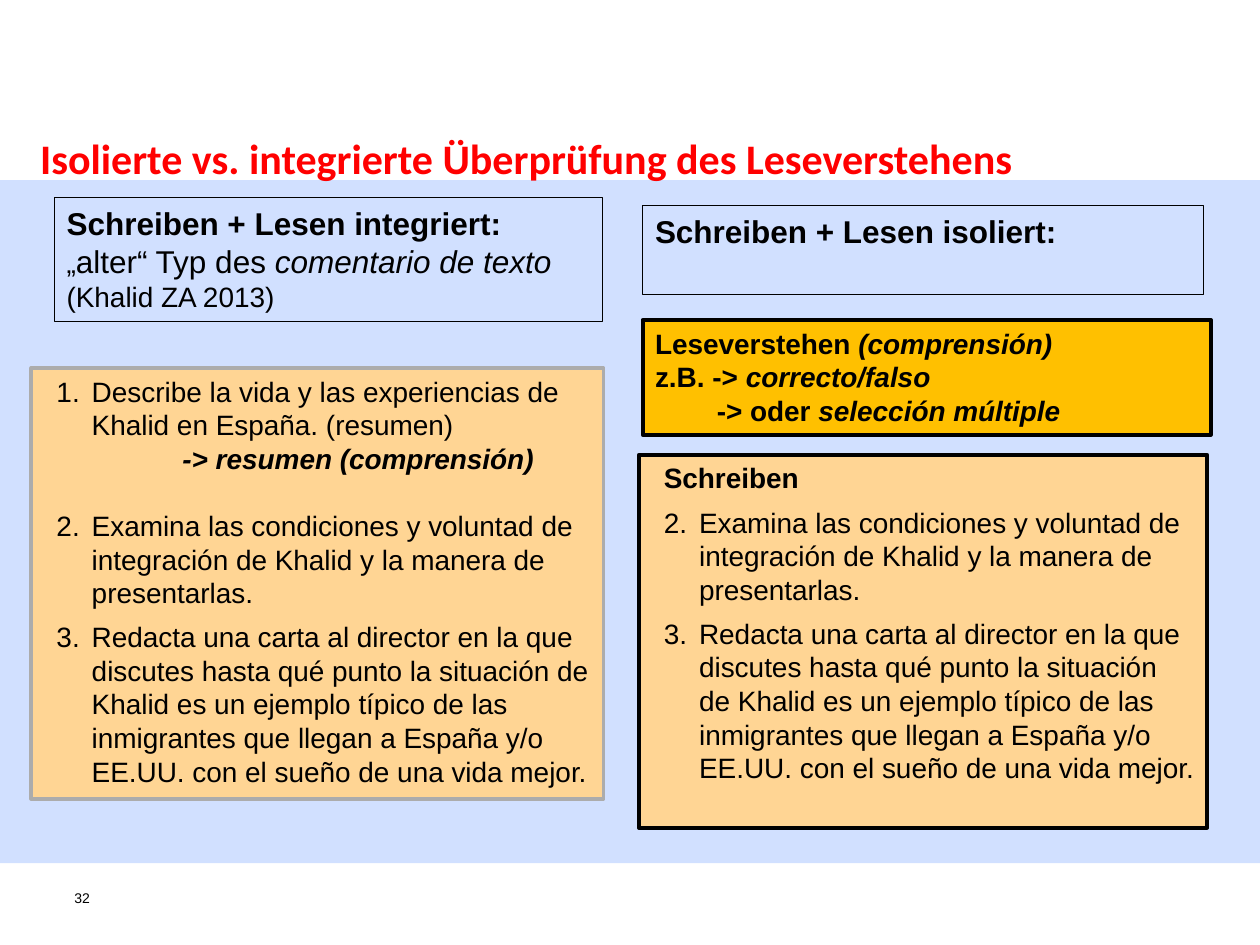
from dataclasses import dataclass

from lxml.etree import SubElement
from pptx import Presentation
from pptx.dml.color import RGBColor as RGB
from pptx.enum.shapes import MSO_SHAPE as Kind
from pptx.enum.text import MSO_ANCHOR as Anchor, PP_ALIGN as Align
from pptx.oxml.ns import qn
from pptx.util import Inches, Pt


@dataclass(frozen=True)
class Theme:
    """Colours, fonts and type sizes of the slide."""
    panel: str = "D1E0FF"
    sand: str = "FFD594"
    gold: str = "FFC000"
    grey: str = "ACACAC"
    ink: str = "000000"
    red: str = "FF0000"
    sans: str = "Arial"
    head: str = "Calibri"
    title: int = 24
    lead: int = 18
    body: int = 16
    tiny: int = 8
    thin: float = 0.75
    thick: float = 2.25


T = Theme()
BOLD = {"bold": True}
ITAL = {"italic": True}
BOTH = BOLD | ITAL
TASKS = (
    "Examina las condiciones y voluntad de integración de Khalid y la manera de "
    "presentarlas.",
    "Redacta una carta al director en la que discutes hasta qué punto la situación "
    "de Khalid es un ejemplo típico de las inmigrantes que llegan a España y/o "
    "EE.UU. con el sueño de una vida mejor.",
)


def add_run(para, text, size=T.body, color=T.ink, face=T.sans, bold=False, italic=False):
    """Add one formatted run to a paragraph."""
    run = para.add_run()
    run.text = text
    font = run.font
    font.name, font.size = face, Pt(size)
    font.bold, font.italic = bold, italic
    font.color.rgb = RGB.from_string(color)


def add_text(frame, *runs, left=0, hang=0, after=0, start=None):
    """Add a paragraph of (text, format) runs, numbered when start is given."""
    first = frame.paragraphs[0]
    para = frame.add_paragraph() if first.runs else first
    para.alignment = Align.LEFT
    para.space_after = Pt(after)
    props = para._p.get_or_add_pPr()
    props.set("marL", str(Inches(left)))
    props.set("indent", str(Inches(-hang)))
    if start:
        SubElement(props, qn("a:buFont"), typeface="+mj-lt")
        SubElement(props, qn("a:buAutoNum"), type="arabicPeriod", startAt=str(start))
    for text, style in runs:
        add_run(para, text, **style)


def add_task(frame, text, start, after=0):
    """Add one numbered exercise with a hanging indent."""
    add_text(frame, (text, {}), left=0.38, hang=0.28, after=after, start=start)


def add_tasks(frame):
    """Add the two writing exercises that both columns share."""
    for text, after in zip(TASKS, (6, 0)):
        add_task(frame, text, 2, after)


def add_box(slide, box, fill=None, line=None, width=T.thin):
    """Draw a rectangle and return its text frame."""
    shape = slide.shapes.add_shape(Kind.RECTANGLE, *map(Inches, box))
    shape.shadow.inherit = False
    if fill:
        shape.fill.solid()
        shape.fill.fore_color.rgb = RGB.from_string(fill)
    else:
        shape.fill.background()
    if line:
        shape.line.color.rgb = RGB.from_string(line)
        shape.line.width = Pt(width)
    else:
        shape.line.fill.background()
    frame = shape.text_frame
    frame.word_wrap, frame.vertical_anchor = True, Anchor.TOP
    return frame


def add_label(slide, box, text, inset=(0, 0), **style):
    """Place a plain text box with the given side and top insets."""
    frame = slide.shapes.add_textbox(*map(Inches, box)).text_frame
    frame.word_wrap = True
    side, top = map(Inches, inset)
    frame.margin_left = frame.margin_right = side
    frame.margin_top, frame.margin_bottom = top, 0
    add_text(frame, (text, style))


def add_joint(slide, x, y):
    """Build the column on integrated reading and writing."""
    lead = {"size": T.lead}
    head = add_box(slide, (x + 0.18, y, 4.35, 0.98), line=T.ink)
    add_text(head, ("Schreiben + Lesen integriert:", lead | BOLD))
    add_text(head, ("„", {}), ("alter“ Typ des ", lead), ("comentario de texto", lead | ITAL))
    add_text(head, ("(Khalid ZA 2013)", {}))

    work = add_box(slide, (x, y + 1.35, 4.54, 3.42), T.sand, T.grey, T.thick)
    add_task(work, "Describe la vida y las experiencias de Khalid en España. (resumen)", 1)
    add_text(work, ("-> resumen (comprensión)", BOTH), left=1.1, after=19.2)
    add_tasks(work)


def add_split(slide, x, y):
    """Build the column on isolated reading and writing."""
    head = add_box(slide, (x + 0.03, y, 4.45, 0.71), line=T.ink)
    add_text(head, ("Schreiben + Lesen isoliert:", {"size": T.lead} | BOLD))

    read = add_box(slide, (x + 0.03, y + 0.91, 4.51, 0.91), T.gold, T.ink, T.thick)
    add_text(read, ("Leseverstehen ", BOLD), ("(comprensión)", BOTH))
    add_text(read, ("z.B. -> ", BOLD), ("correcto/falso", BOTH))
    add_text(read, ("-> oder ", BOLD), ("selección múltiple", BOTH), left=0.49)

    work = add_box(slide, (x, y + 1.98, 4.51, 2.96), T.sand, T.ink, T.thick)
    add_text(work, ("Schreiben", BOLD), left=0.1, after=6)
    add_tasks(work)


def main():
    """Build and save the slide."""
    deck = Presentation()
    deck.slide_width, deck.slide_height = Inches(10), Inches(7.5)
    slide = deck.slides.add_slide(deck.slide_layouts[6])
    add_box(slide, (0, 1.43, 10, 5.42), T.panel)
    add_label(slide, (0.59, 7.06, 0.32, 0.37), "32", size=T.tiny)
    add_label(slide, (0.22, 0.89, 9.65, 0.61),
              "Isolierte vs. integrierte Überprüfung des Leseverstehens",
              inset=(0.1, 0.16), size=T.title, face=T.head, color=T.red, bold=True)
    add_joint(slide, 0.25, 1.57)
    add_split(slide, 5.07, 1.63)
    deck.save("out.pptx")


if __name__ == "__main__":
    main()
